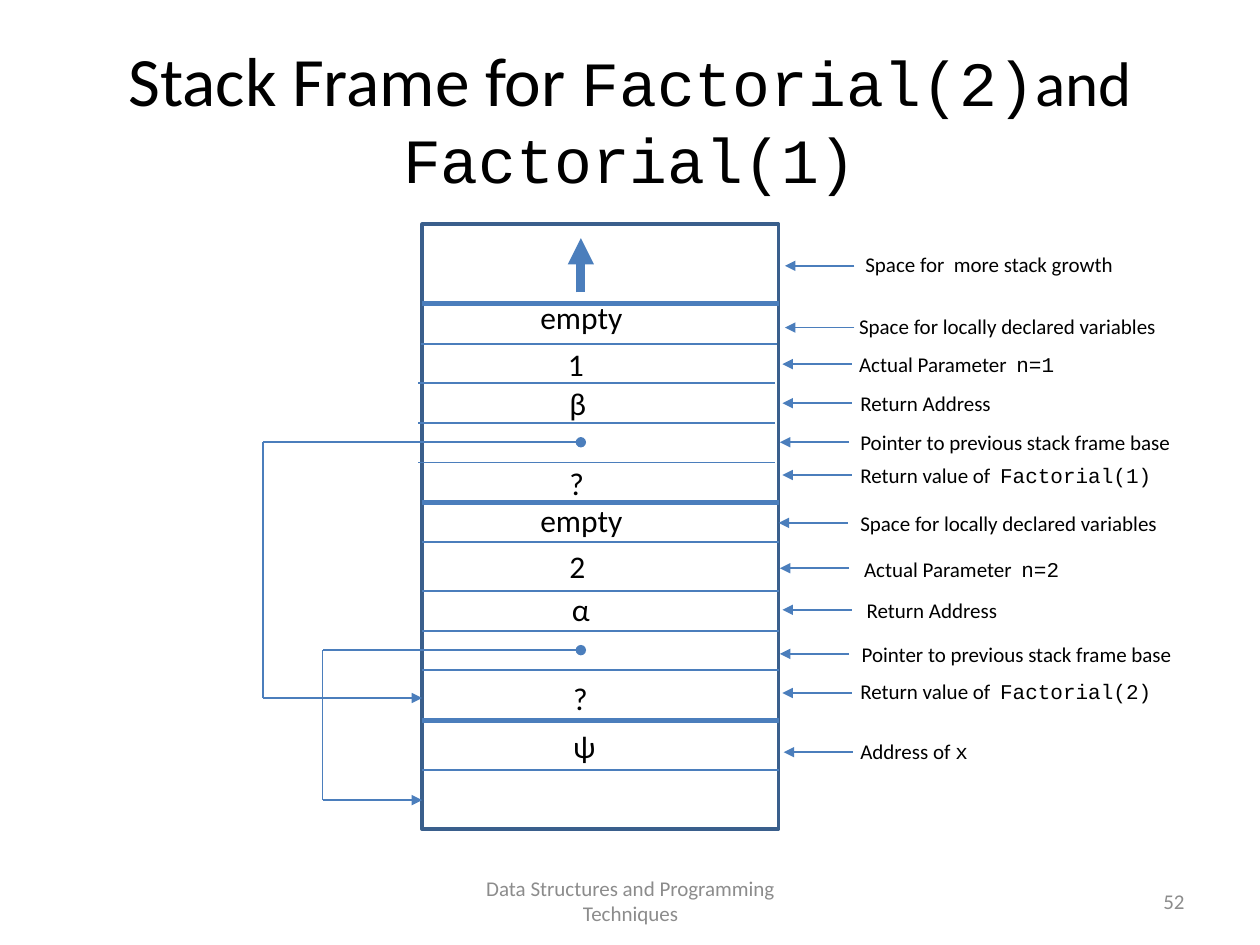
from lxml import etree
from pptx import Presentation
from pptx import util as u
from pptx.dml.color import RGBColor
from pptx.enum import shapes, text
from pptx.oxml.ns import qn

BLACK = RGBColor(0, 0, 0)
WHITE = RGBColor(255, 255, 255)
GRAY = RGBColor(0x8C, 0x8C, 0x8C)
BLUE = RGBColor(0x4B, 0x7E, 0xBC)
NAVY = RGBColor(0x3A, 0x5F, 0x8C)
SANS, MONO = "Calibri", "Courier New"
LEFT, MID, CENTER, RIGHT = 33.5, 46.1, text.PP_ALIGN.CENTER, text.PP_ALIGN.RIGHT

# Row of the divider, its left column, its weight
RULES = [
    (24.1, LEFT, 3), (27.3, 33.4, 1), (30.4, 33.2, 1), (33.6, 33.2, 1),
    (36.7, 33.2, 1), (39.9, LEFT, 3), (43, LEFT, 1), (46.9, LEFT, 1),
    (50.1, LEFT, 1), (53.2, LEFT, 1), (57.2, LEFT, 3), (61.1, LEFT, 1),
]
# Cell text, left column, top row, width
CELLS = [
    ("empty", 41.9, 23.2, 10.9), ("1", 44.1, 26.9, 6.3), ("β", 44.2, 30, 6.3),
    ("?", 44.2, 36.3, 6.3), ("empty", 41.9, 39.3, 10.9), ("2", 44.2, 42.9, 6.3),
    ("α", 44.4, 46.3, 6.3), ("?", 44.5, 53.4, 6.3), ("ψ", 44.5, 57.2, 6.3),
]
# Note, code, left column and top row of the note, tip column and row of its arrow
NOTES = [
    ("Space for  more stack growth", "", 67.7, 19.5, 62.3, 21.1),
    ("Space for locally declared variables", "", 67.2, 24.4, 62.3, 26),
    ("Actual Parameter  ", "n=1", 67.2, 27.4, 62.1, 28.9),
    ("Return Address", "", 67.3, 30.5, 62.1, 32),
    ("Pointer to previous stack frame base", "", 67.3, 33.6, 61.9, 35.1),
    ("Return value of  ", "Factorial(1)", 67.3, 36.2, 62.1, 37.7),
    ("Space for locally declared variables", "", 67.3, 40, 61.8, 41.5),
    ("Actual Parameter  ", "n=2", 67.6, 43.7, 61.9, 45.1),
    ("Return Address", "", 67.8, 46.9, 62.1, 48.4),
    ("Pointer to previous stack frame base", "", 67.4, 50.4, 61.9, 51.9),
    ("Return value of  ", "Factorial(2)", 67.3, 53.4, 62.1, 55),
    ("Address of ", "x", 67.3, 58.1, 62.2, 59.7),
]
# Start row, turning column, end row of each link to an earlier frame
LINKS = [(35.1, 20.9, 55.4), (51.6, 25.6, 63.5)]


class Deck:
    """Style and current slide, on a grid of 100 columns by 75 rows."""

    def __init__(self):
        self.prs = Presentation()
        self.prs.slide_width, self.prs.slide_height = u.Inches(10), u.Inches(7.5)
        self.page = self.prs.slides.add_slide(self.prs.slide_layouts[5])

    def grid(self, *vals):
        """Turn columns and rows into lengths."""
        return [round(v * self.prs.slide_width / 100) for v in vals]

    def fill(self, frame, runs, color=BLACK, align=None):
        """Fill the first paragraph with (words, font, size) runs."""
        para = frame.paragraphs[0]
        para.alignment = align
        for words, font, size in runs:
            run = para.add_run()
            run.text = words
            run.font.name, run.font.size = font, u.Pt(size)
            run.font.color.rgb = color

    def title(self, box, runs):
        head = self.page.shapes.title
        head.left, head.top, head.width, head.height = self.grid(*box)
        head.text_frame.vertical_anchor = text.MSO_ANCHOR.MIDDLE
        self.fill(head.text_frame, runs, align=CENTER)

    def label(self, box, runs):
        frame = self.page.shapes.add_textbox(*self.grid(*box)).text_frame
        frame.word_wrap = True
        frame.auto_size = text.MSO_AUTO_SIZE.SHAPE_TO_FIT_TEXT
        self.fill(frame, runs)

    def foot(self, box, words, align):
        frame = self.page.shapes.add_textbox(*self.grid(*box)).text_frame
        frame.word_wrap = True
        frame.vertical_anchor = text.MSO_ANCHOR.MIDDLE
        self.fill(frame, [(words, SANS, 12)], GRAY, align)

    def rect(self, box):
        shape = self.page.shapes.add_shape(
            shapes.MSO_SHAPE.RECTANGLE, *self.grid(*box))
        shape.shadow.inherit = False
        shape.fill.solid()
        shape.fill.fore_color.rgb = WHITE
        shape.line.color.rgb, shape.line.width = NAVY, u.Pt(2)

    def line(self, start, end, weight=1, head=None, tail=None):
        """Draw a straight line; head marks its start and tail its end."""
        link = self.page.shapes.add_connector(
            shapes.MSO_CONNECTOR.STRAIGHT, *self.grid(*start, *end))
        link.line.color.rgb, link.line.width = BLUE, u.Pt(weight)
        props = link._element.spPr
        for tag, kind in (("a:headEnd", head), ("a:tailEnd", tail)):
            if kind:
                etree.SubElement(props.find(qn("a:ln")), qn(tag), type=kind)
        etree.SubElement(props, qn("a:effectLst"))


def main():
    deck = Deck()
    deck.title((5, 3, 90, 12.5), [
        ("Stack Frame for ", SANS, 39.6), ("Factorial(2)", MONO, 36),
        ("and", SANS, 36), (" Factorial(1)", MONO, 36)])

    deck.rect((LEFT, 17.8, 28.3, 48))
    for row, col, weight in RULES:
        deck.line((col, row), (col + 28.3, row), weight)
    for words, col, row, width in CELLS:
        deck.label((col, row, width, 4), [(words, SANS, 18)])
    deck.line((MID, 23.2), (MID, 18.9), 5, tail="triangle")

    for words, code, col, row, tip, level in NOTES:
        runs = [(words, SANS, 12)]
        if code:
            runs.append((code, MONO, 12))
        deck.label((col, row, 28, 3), runs)
        deck.line((tip + 5.5, level), (tip, level), tail="triangle")

    for top, turn, base in LINKS:
        deck.line((MID, top), (turn, top), head="oval")
        deck.line((turn, top), (turn, base))
        deck.line((turn, base), (LEFT, base), tail="triangle")

    deck.foot((34.2, 69.5, 31.7, 4),
              "Data Structures and Programming Techniques", CENTER)
    deck.foot((71.7, 69.5, 23.3, 4), "52", RIGHT)
    deck.prs.save("out.pptx")


if __name__ == "__main__":
    main()
